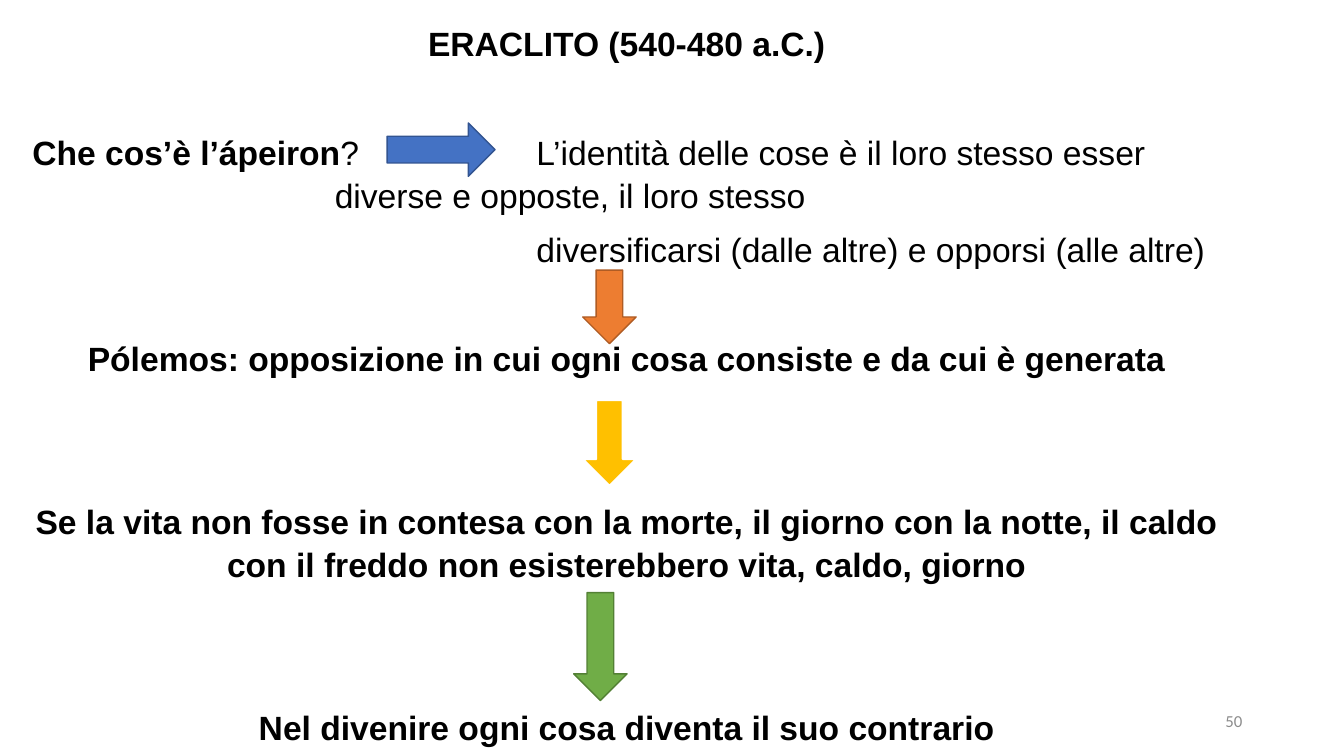
from lxml.etree import SubElement
from pptx import Presentation
from pptx.dml.color import RGBColor
from pptx.enum.shapes import MSO_SHAPE
from pptx.enum.text import MSO_ANCHOR, MSO_AUTO_SIZE, PP_ALIGN
from pptx.oxml.ns import qn
from pptx.util import Inches, Pt

COLORS = {
    "text": "000000", "number": "8C8C8C", "white": "FFFFFF",
    "blue": "4472C4", "blue_line": "325491",
    "orange": "ED7D31", "orange_line": "AF5C24",
    "yellow": "FFC000", "green": "70AD47", "green_line": "538035",
}
LEFT, WIDTH = 0.22, 11.99
BLANK_LINE = 38.8


def color(name):
    return RGBColor.from_string(COLORS[name])


def format_run(run, bold, size=24, font="Arial", color_name="text"):
    run.font.name = font
    run.font.size = Pt(size)
    run.font.bold = bold
    run.font.color.rgb = color(color_name)


def place_placeholder(placeholder, top, height):
    placeholder.left, placeholder.top = Inches(LEFT), Inches(top)
    placeholder.width, placeholder.height = Inches(WIDTH), Inches(height)
    text_frame = placeholder.text_frame
    text_frame.word_wrap = True
    text_frame.auto_size = MSO_AUTO_SIZE.NONE
    text_frame.vertical_anchor = MSO_ANCHOR.TOP
    return text_frame


def format_paragraph(paragraph, bold, centered, indent=0, before=0, after=8):
    properties = paragraph._p.get_or_add_pPr()
    properties.set("marL", str(Inches(indent)))
    properties.set("indent", "0")
    SubElement(properties, qn("a:buNone"))
    paragraph.alignment = PP_ALIGN.CENTER if centered else PP_ALIGN.LEFT
    paragraph.line_spacing = 1.07
    paragraph.space_before = Pt(before)
    paragraph.space_after = Pt(after)
    for run in paragraph.runs:
        format_run(run, bold)


def add_title(slide, text):
    text_frame = place_placeholder(slide.shapes.title, 0.15, 0.6)
    text_frame.text = text
    format_paragraph(text_frame.paragraphs[0], True, True)


def add_body(slide):
    text_frame = place_placeholder(slide.placeholders[1], 1.23, 6.27)
    question = text_frame.paragraphs[0]
    question.text = "Che cos’è l’ápeiron"
    format_paragraph(question, True, False, after=0)
    answer = question.add_run()
    answer.text = "?\t\t\t\tL’identità delle cose è il loro stesso esser"
    format_run(answer, False)

    for text, indent in [
        ("diverse e opposte, il loro stesso", 3),
        ("diversificarsi (dalle altre) e opporsi (alle altre)", 5),
    ]:
        paragraph = text_frame.add_paragraph()
        paragraph.text = text
        format_paragraph(paragraph, False, False, indent=indent)

    for text, blank_lines in [
        ("Pólemos: opposizione in cui ogni cosa consiste e da cui è generata", 1),
        ("Se la vita non fosse in contesa con la morte, il giorno con la notte, "
         "il caldo con il freddo non esisterebbero vita, caldo, giorno", 2),
        ("Nel divenire ogni cosa diventa il suo contrario", 2),
    ]:
        paragraph = text_frame.add_paragraph()
        paragraph.text = text
        format_paragraph(paragraph, True, True, before=blank_lines * BLANK_LINE)


def add_arrow(slide, preset, left, top, width, height, fill, line, line_width=1):
    arrow = slide.shapes.add_shape(
        preset, Inches(left), Inches(top), Inches(width), Inches(height))
    arrow.shadow.inherit = False
    arrow.fill.solid()
    arrow.fill.fore_color.rgb = color(fill)
    arrow.line.color.rgb = color(line)
    arrow.line.width = Pt(line_width)


def add_slide_number(slide, number):
    box = slide.shapes.add_textbox(Inches(9.42), Inches(6.95), Inches(3), Inches(0.4))
    text_frame = box.text_frame
    text_frame.word_wrap = True
    text_frame.vertical_anchor = MSO_ANCHOR.MIDDLE
    text_frame.text = number
    paragraph = text_frame.paragraphs[0]
    paragraph.alignment = PP_ALIGN.RIGHT
    format_run(paragraph.runs[0], False, 12, "Calibri", "number")


def main():
    presentation = Presentation()
    presentation.slide_width = Inches(13.33)
    presentation.slide_height = Inches(7.5)
    slide = presentation.slides.add_slide(presentation.slide_layouts[1])

    add_title(slide, "ERACLITO (540-480 a.C.)")
    add_body(slide)
    add_slide_number(slide, "50")
    right, down = MSO_SHAPE.RIGHT_ARROW, MSO_SHAPE.DOWN_ARROW
    add_arrow(slide, right, 3.84, 1.22, 1.07, 0.53, "blue", "blue_line")
    add_arrow(slide, down, 5.78, 2.68, 0.53, 0.73, "orange", "orange_line")
    add_arrow(slide, down, 5.78, 3.97, 0.53, 0.85, "yellow", "white", 1.5)
    add_arrow(slide, down, 5.69, 5.88, 0.53, 1.07, "green", "green_line")

    presentation.save("out.pptx")


if __name__ == "__main__":
    main()
